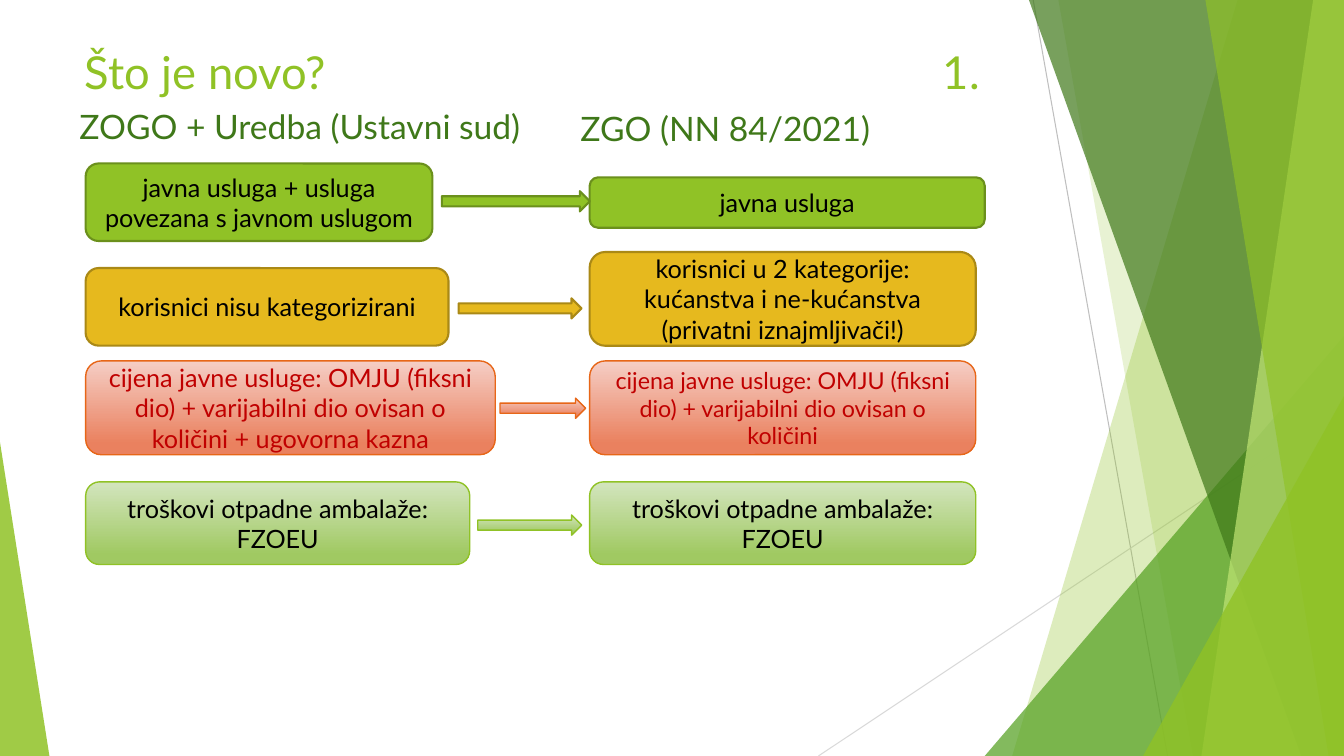
from lxml import etree
from pptx import Presentation
from pptx.dml.color import RGBColor
from pptx.enum.shapes import MSO_CONNECTOR, MSO_SHAPE
from pptx.enum.text import MSO_ANCHOR as Anchor, PP_ALIGN as Align
from pptx.oxml.ns import qn
from pptx.util import Pt

hex_color = RGBColor.from_string


def write(shape, text, size=18, color="000000", align=Align.CENTER, anchor=Anchor.MIDDLE):
    frame = shape.text_frame
    frame.word_wrap = True
    frame.vertical_anchor = anchor
    para = frame.paragraphs[0]
    para.alignment = align
    span = para.add_run()
    span.text = text
    span.font.name = "Lato"
    span.font.size = Pt(size)
    span.font.color.rgb = hex_color(color)
    return para


def paint(shape, colors, outline=None, weight=1, opacity=100):
    shape.shadow.inherit = False
    if len(colors) == 2:
        shape.fill.gradient()
        shape.fill.gradient_angle = 270
        for stop, color, position in zip(shape.fill.gradient_stops, colors, (0, 0.88)):
            stop.color.rgb = hex_color(color)
            stop.position = position
    else:
        shape.fill.solid()
        shape.fill.fore_color.rgb = hex_color(colors[0])
    if opacity < 100:
        solid = shape.element.spPr.find(qn("a:solidFill"))
        etree.SubElement(solid[0], qn("a:alpha"), val=str(opacity * 1000))
    if outline:
        shape.line.color.rgb = hex_color(outline)
        shape.line.width = Pt(weight)
    else:
        shape.line.fill.background()


deck = Presentation()
deck.slide_width, deck.slide_height = Pt(960), Pt(540)
page = deck.slides.add_slide(deck.slide_layouts[5])
shapes = page.shapes

for x1, y1, x2, y2, color in [
    (738, 0, 834, 540, "BFBFBF"),
    (960, 290, 584.6, 540, "D9D9D9"),
]:
    ray = shapes.add_connector(MSO_CONNECTOR.STRAIGHT, Pt(x1), Pt(y1), Pt(x2), Pt(y2))
    ray.line.color.rgb = hex_color(color)
    ray.line.width = Pt(0.75)
    etree.SubElement(ray.element.spPr, qn("a:effectLst"))

for kind, top_x, bottom_x, color, opacity in [
    ("band", 884, 723, "90C226", 30),
    ("band", 756, 852, "90C226", 20),
    ("triangle", 703.4, 240, "54A021", 72),
    ("band", 735, 929.5, "3F7819", 70),
    ("band", 938, 858.2, "C0E474", 70),
    ("band", 861, 949, "90C226", 65),
    ("triangle", 816.5, 283, "90C226", 80),
]:
    if kind == "band":
        outline = shapes.build_freeform(Pt(top_x), 0)
        corners = [(960, 0), (960, 540), (bottom_x, 540)]
        outline.add_line_segments([(Pt(x), Pt(y)) for x, y in corners])
        facet = outline.convert_to_shape()
    else:
        left, top = top_x, bottom_x
        facet = shapes.add_shape(
            MSO_SHAPE.ISOSCELES_TRIANGLE, Pt(left), Pt(top), Pt(960 - left), Pt(540 - top))
        facet.adjustments[0] = 1
    paint(facet, [color], opacity=opacity)

wedge = shapes.add_shape(MSO_SHAPE.ISOSCELES_TRIANGLE, 0, Pt(316), Pt(35.3), Pt(224))
wedge.adjustments[0] = 0
paint(wedge, ["90C226"], opacity=85)

title = shapes.title
title.left, title.top, title.width, title.height = Pt(53.3), Pt(28), Pt(676.8), Pt(45.4)
para = write(title, "Što je novo?\t1.", size=32.4, color="90C226", align=Align.LEFT)
tabs = etree.SubElement(para._p.get_or_add_pPr(), qn("a:tabLst"))
etree.SubElement(tabs, qn("a:tab"), pos=str(Pt(613)), algn="l")

for left, top, heading in [
    (49.7, 62.6, "ZOGO + Uredba (Ustavni sud)"),
    (407.5, 64.1, "ZGO (NN 84/2021)"),
]:
    box = shapes.add_textbox(Pt(left), Pt(top), Pt(329.8), Pt(45.4))
    write(box, heading, size=24, color="3F7819", align=Align.LEFT, anchor=Anchor.BOTTOM)

before_x, after_x = 61.2, 421.2
green = (["90C226"], "6B901C", 1.5)
gold = (["E6B91E"], "AA8916", 1.5)
coral = (["F5CEC5", "EA815F"], "E76618", 1)
pale = (["D3E5BE", "A0C962"], "90C226", 1)
price = "cijena javne usluge: OMJU (fiksni dio) + varijabilni dio ovisan o količini"
packaging = "troškovi otpadne ambalaže: FZOEU"

for left, top, width, height, style, text, size, color in [
    (before_x, 116.8, 247.7, 55.4, green,
     "javna usluga + usluga povezana s javnom uslugom", 18, "000000"),
    (after_x, 126.7, 282.2, 36, green, "javna usluga", 18, "000000"),
    (before_x, 191.5, 259.2, 55.4, gold, "korisnici nisu kategorizirani", 18, "000000"),
    (after_x, 180, 275.8, 67, gold,
     "korisnici u 2 kategorije: kućanstva i ne-kućanstva (privatni iznajmljivači!)", 18, "000000"),
    (before_x, 257.8, 292.6, 67, coral, price + " + ugovorna kazna", 18, "C00000"),
    (after_x, 257.8, 275.8, 67, coral, price, 16.6, "C00000"),
    (before_x, 344.2, 274.3, 59, pale, packaging, 18, "000000"),
    (after_x, 344.2, 275.8, 59, pale, packaging, 18, "000000"),
]:
    card = shapes.add_shape(
        MSO_SHAPE.ROUNDED_RECTANGLE, Pt(left), Pt(top), Pt(width), Pt(height))
    paint(card, *style)
    write(card, text, size=size, color=color)

for left, top, width, style in [
    (315.6, 136.6, 105.8, green),
    (327.6, 213.1, 87.8, gold),
    (357.1, 284.4, 61.2, coral),
    (341.3, 367.9, 74.2, pale),
]:
    arrow = shapes.add_shape(MSO_SHAPE.RIGHT_ARROW, Pt(left), Pt(top), Pt(width), Pt(14.4))
    paint(arrow, *style)

deck.save("out.pptx")
